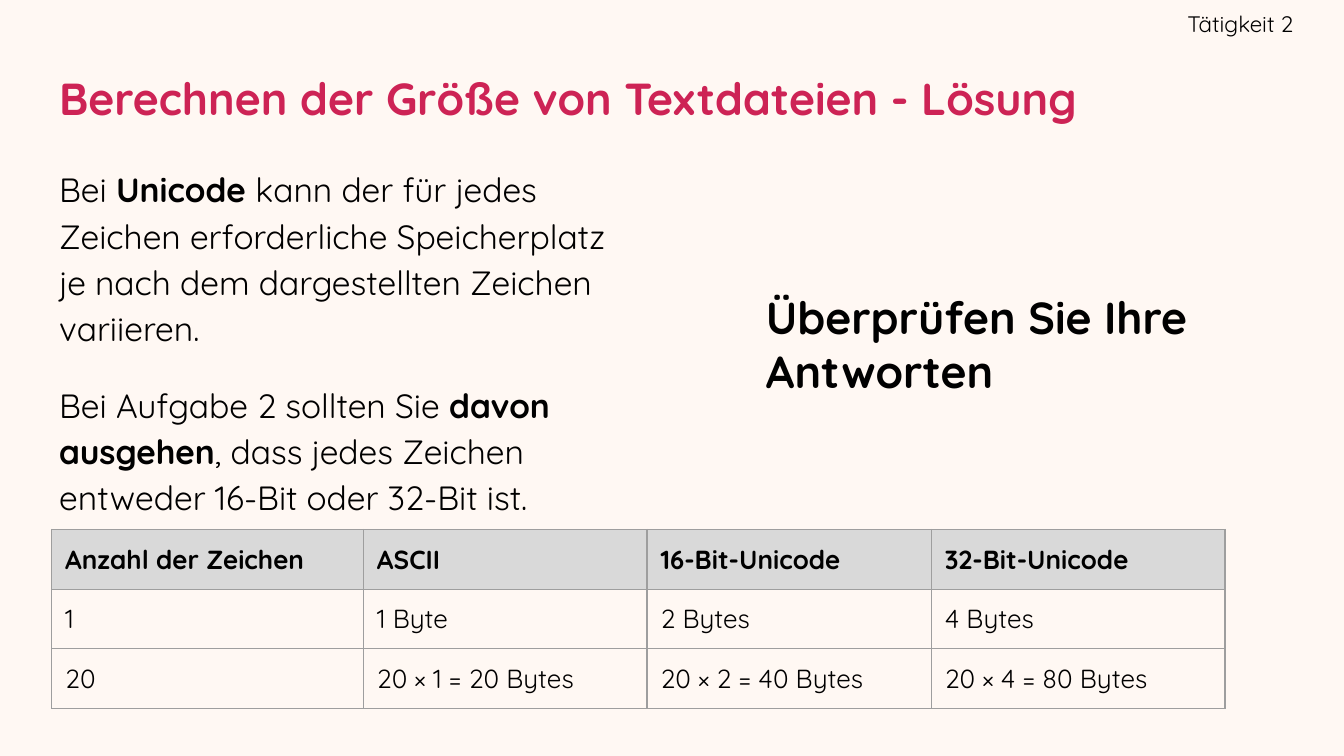
"""Build the solution slide on calculating the size of text files."""
from lxml import etree
from pptx import Presentation, util as u
from pptx.dml.color import RGBColor
from pptx.enum import text
from pptx.oxml import ns

PX = 4572
INSET = 20
FONT = "Quicksand"
CREAM = RGBColor(0xFF, 0xF8, 0xF3)
BLACK = RGBColor(0, 0, 0)
CRIMSON = RGBColor(0xCD, 0x23, 0x55)
HEADER_GRAY = RGBColor(0xD9, 0xD9, 0xD9)
BORDER_GRAY = RGBColor(0x9E, 0x9E, 0x9E)


def add_runs(paragraph, runs, size, color=BLACK):
    for wording, bold in runs:
        run = paragraph.add_run()
        run.text = wording
        run.font.name = FONT
        run.font.size = u.Pt(size)
        run.font.bold = bold
        run.font.color.rgb = color


def place(shape, box, anchor, right_inset=INSET):
    shape.left, shape.top, shape.width, shape.height = [n * PX for n in box]
    frame = shape.text_frame
    frame.word_wrap = True
    frame.auto_size = text.MSO_AUTO_SIZE.NONE
    frame.vertical_anchor = anchor
    frame.margin_left = frame.margin_top = frame.margin_bottom = INSET * PX
    frame.margin_right = right_inset * PX
    return frame


presentation = Presentation()
presentation.slide_width = 2000 * PX
presentation.slide_height = 1125 * PX
slide = presentation.slides.add_slide(presentation.slide_layouts[3])
slide.background.fill.solid()
slide.background.fill.fore_color.rgb = CREAM
title, body, activity = slide.placeholders
TOP, MIDDLE = text.MSO_ANCHOR.TOP, text.MSO_ANCHOR.MIDDLE

frame = place(body, (68, 223, 896, 800), TOP)
explanation = [
    [("Bei ", False), ("Unicode ", True),
     ("kann der für jedes Zeichen erforderliche Speicherplatz "
      "je nach dem dargestellten Zeichen variieren.", False)],
    [("Bei Aufgabe 2 sollten Sie ", False), ("davon ausgehen", True),
     (", dass jedes Zeichen entweder 16-Bit oder 32-Bit ist.", False)],
]
for index, runs in enumerate(explanation):
    paragraph = frame.add_paragraph() if index else frame.paragraphs[0]
    paragraph.line_spacing = 1.15
    paragraph.space_before = u.Pt(16 * index)
    add_runs(paragraph, runs, 18)

frame = place(title, (68, 69, 1864, 153), MIDDLE)
frame.paragraphs[0].alignment = text.PP_ALIGN.LEFT
add_runs(frame.paragraphs[0],
         [("Berechnen der Größe von Textdateien - Lösung", True)], 24, CRIMSON)

frame = place(activity, (1496, 0, 429, 69), MIDDLE, right_inset=0)
frame.paragraphs[0].alignment = text.PP_ALIGN.RIGHT
frame.paragraphs[0].space_before = u.Pt(0)
add_runs(frame.paragraphs[0], [("Tätigkeit 2", False)], 12)

for placeholder in (body, activity):
    for paragraph in placeholder.text_frame.paragraphs:
        properties = paragraph._p.get_or_add_pPr()
        properties.set("marL", "0")
        properties.set("indent", "0")
        etree.SubElement(properties, ns.qn("a:buNone"))

rows = [
    ["Anzahl der Zeichen", "ASCII", "16-Bit-Unicode", "32-Bit-Unicode"],
    ["1", "1 Byte", "2 Bytes", "4 Bytes"],
    ["20", "20 × 1 = 20 Bytes", "20 × 2 = 40 Bytes", "20 × 4 = 80 Bytes"],
]
widths = [464, 422, 423, 437]
row_height = 84
table = slide.shapes.add_table(
    len(rows), len(widths), 77 * PX, 788 * PX,
    sum(widths) * PX, len(rows) * row_height * PX).table
table.first_row = table.horz_banding = False
for column, width in zip(table.columns, widths):
    column.width = width * PX
for row_index, row in enumerate(rows):
    table.rows[row_index].height = row_height * PX
    for column_index, wording in enumerate(row):
        cell = table.cell(row_index, column_index)
        cell.margin_left = cell.margin_right = INSET * PX
        cell.margin_top = cell.margin_bottom = INSET * PX
        add_runs(cell.text_frame.paragraphs[0], [(wording, row_index == 0)], 14)
        cell_properties = cell._tc.get_or_add_tcPr()
        for side in ("lnL", "lnR", "lnT", "lnB"):
            border = etree.SubElement(cell_properties, ns.qn("a:" + side), w="9525")
            fill = etree.SubElement(border, ns.qn("a:solidFill"))
            etree.SubElement(fill, ns.qn("a:srgbClr"), val=str(BORDER_GRAY))
        if row_index == 0:
            cell.fill.solid()
            cell.fill.fore_color.rgb = HEADER_GRAY
        else:
            cell.fill.background()

prompt = slide.shapes.add_textbox(0, 0, 0, 0)
frame = place(prompt, (1120, 411, 696, 122), TOP)
frame.auto_size = text.MSO_AUTO_SIZE.SHAPE_TO_FIT_TEXT
add_runs(frame.paragraphs[0], [("Überprüfen Sie Ihre Antworten", True)], 24)

presentation.save("out.pptx")
